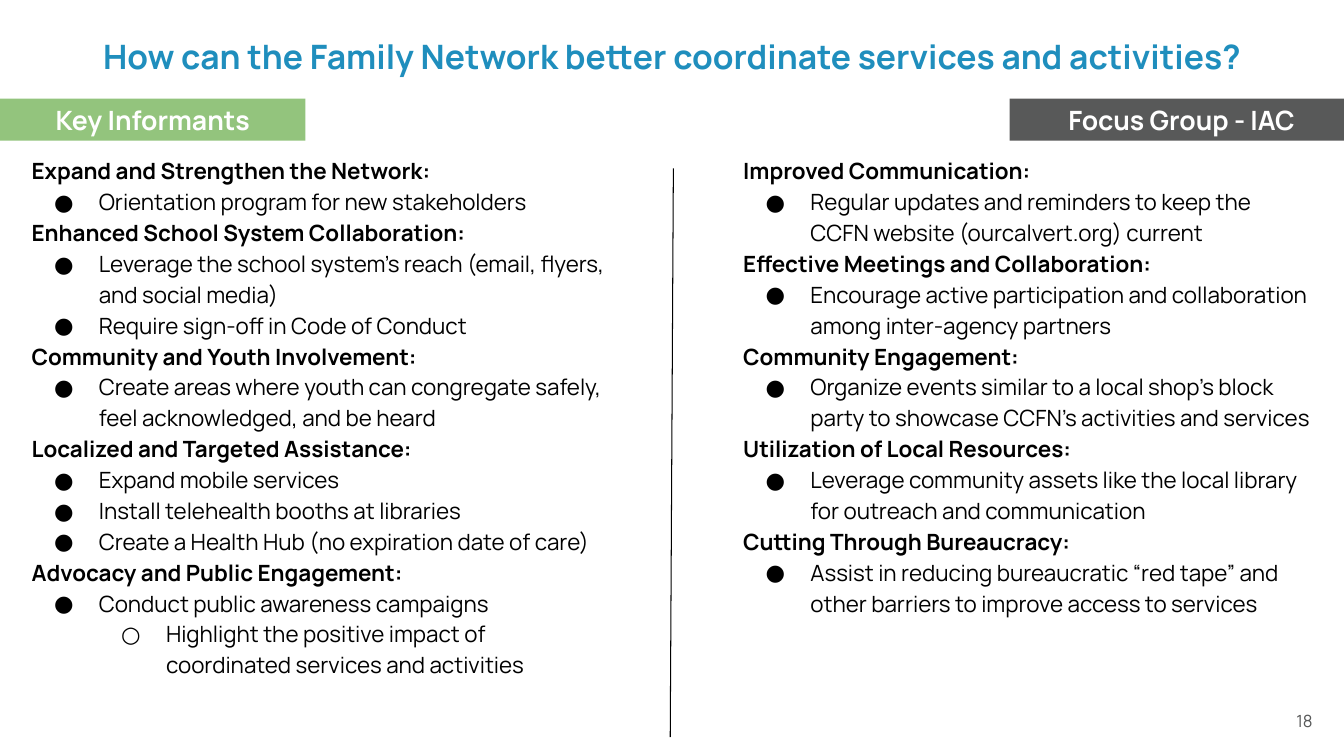
from lxml.etree import SubElement
from pptx import Presentation
from pptx.dml.color import RGBColor
from pptx.enum.shapes import MSO_CONNECTOR, MSO_SHAPE
from pptx.enum.text import MSO_ANCHOR, PP_ALIGN
from pptx.oxml.ns import qn
from pptx.util import Pt

FONT = "Manrope"
BLACK, WHITE, GRAY, BLUE, GREEN = "000000", "FFFFFF", "585959", "1F8EBD", "93C47D"
BULLETS = ["●", "○"]

KEY_INFORMANTS = [
    ("Expand and Strengthen the Network:", ["Orientation program for new stakeholders"]),
    ("Enhanced School System Collaboration:", [
        "Leverage the school system's reach (email, flyers, and social media)",
        "Require sign-off in Code of Conduct"]),
    ("Community and Youth Involvement:", [
        "Create areas where youth can congregate safely, feel acknowledged, and be heard"]),
    ("Localized and Targeted Assistance:", [
        "Expand mobile services",
        "Install telehealth booths at libraries",
        "Create a Health Hub (no expiration date of care)"]),
    ("Advocacy and Public Engagement:", [
        "Conduct public awareness campaigns",
        ["Highlight the positive impact of coordinated services and activities"]]),
]
FOCUS_GROUP = [
    ("Improved Communication:", [
        "Regular updates and reminders to keep the CCFN website (ourcalvert.org) current"]),
    ("Effective Meetings and Collaboration:", [
        "Encourage active participation and collaboration among inter-agency partners"]),
    ("Community Engagement:", [
        "Organize events similar to a local shop's block party to showcase CCFN's "
        "activities and services"]),
    ("Utilization of Local Resources:", [
        "Leverage community assets like the local library for outreach and communication"]),
    ("Cutting Through Bureaucracy:", [
        "Assist in reducing bureaucratic “red tape” and other barriers to improve "
        "access to services"]),
]


def color(value):
    """Turn a hex string into a colour."""
    return RGBColor.from_string(value)


def style_font(paragraph, size, fill, bold=False):
    """Set the font of a paragraph's runs."""
    for run in paragraph.runs:
        run.font.name = FONT
        run.font.size = Pt(size)
        run.font.bold = bold
        run.font.color.rgb = color(fill)


def set_margins(frame, left, top, right, bottom):
    """Set the inner margins of a text frame and let it wrap."""
    frame.word_wrap = True
    frame.margin_left, frame.margin_top = Pt(left), Pt(top)
    frame.margin_right, frame.margin_bottom = Pt(right), Pt(bottom)


def add_label(slide, text, box, size, fill, align, margins, anchor, bold=False):
    """Add a one-line text box."""
    frame = slide.shapes.add_textbox(*map(Pt, box)).text_frame
    set_margins(frame, *margins)
    frame.vertical_anchor = anchor
    frame.text = text
    frame.paragraphs[0].alignment = align
    style_font(frame.paragraphs[0], size, fill, bold)


def add_banner(slide, text, left, width, fill):
    """Add a filled column heading."""
    banner = slide.shapes.add_shape(
        MSO_SHAPE.RECTANGLE, Pt(left), Pt(70.5), Pt(width), Pt(30))
    banner.shadow.inherit = False
    banner.fill.solid()
    banner.fill.fore_color.rgb = color(fill)
    banner.line.fill.background()
    frame = banner.text_frame
    set_margins(frame, 7.2, 0, 7.2, 0)
    frame.vertical_anchor = MSO_ANCHOR.MIDDLE
    frame.text = text
    frame.paragraphs[0].alignment = PP_ALIGN.CENTER
    style_font(frame.paragraphs[0], 19, WHITE, True)


def add_bullet(paragraph, level):
    """Give a paragraph its bullet and hanging indent."""
    paragraph.level = level
    properties = paragraph._p.get_or_add_pPr()
    properties.set("marL", str(Pt(48 * (level + 1))))
    properties.set("indent", str(-Pt(32)))
    bullet_color = SubElement(properties, qn("a:buClr"))
    SubElement(bullet_color, qn("a:srgbClr")).set("val", BLACK)
    SubElement(properties, qn("a:buFont")).set("typeface", FONT)
    SubElement(properties, qn("a:buChar")).set("char", BULLETS[level])


def outline(topics):
    """Yield each line's text with its bullet level, None for a heading."""
    for heading, points in topics:
        yield heading, None
        for point in points:
            if isinstance(point, list):
                yield from ((detail, 1) for detail in point)
            else:
                yield point, 0


def add_topics(slide, topics, left, width):
    """Add a column of bold headings with bulleted points."""
    frame = slide.shapes.add_textbox(Pt(left), Pt(100), Pt(width), Pt(417.5)).text_frame
    set_margins(frame, 9.6, 9.6, 9.6, 9.6)
    for index, (text, level) in enumerate(outline(topics)):
        paragraph = frame.add_paragraph() if index else frame.paragraphs[0]
        paragraph.text = text
        paragraph.line_spacing = 1.15
        if level is not None:
            add_bullet(paragraph, level)
        style_font(paragraph, 16, BLACK, level is None)


def add_divider(slide):
    """Add the line between the two columns."""
    divider = slide.shapes.add_connector(
        MSO_CONNECTOR.STRAIGHT, Pt(481), Pt(120.25), Pt(478.75), Pt(526.5))
    divider.line.color.rgb = color(BLACK)
    divider.line.width = Pt(0.75)
    SubElement(divider._element.spPr, qn("a:effectLst"))


def main():
    """Build and save the slide."""
    deck = Presentation()
    deck.slide_width, deck.slide_height = Pt(960), Pt(540)
    slide = deck.slides.add_slide(deck.slide_layouts[6])
    add_label(slide, "18", (728.75, 500.5, 216, 28.75), 12, GRAY, PP_ALIGN.RIGHT,
              (7.2, 3.6, 7.2, 3.6), MSO_ANCHOR.MIDDLE)
    add_label(slide, "How can the Family Network better coordinate services and activities?",
              (13, 25, 934, 38), 24, BLUE, PP_ALIGN.CENTER,
              (0, 0.75, 0, 0), MSO_ANCHOR.TOP, True)
    add_topics(slide, KEY_INFORMANTS, 13, 435)
    add_divider(slide)
    add_banner(slide, "Key Informants", 0, 218.25, GREEN)
    add_banner(slide, "Focus Group - IAC", 721.25, 245.5, GRAY)
    add_topics(slide, FOCUS_GROUP, 521.25, 425.5)
    deck.save("out.pptx")


if __name__ == "__main__":
    main()
